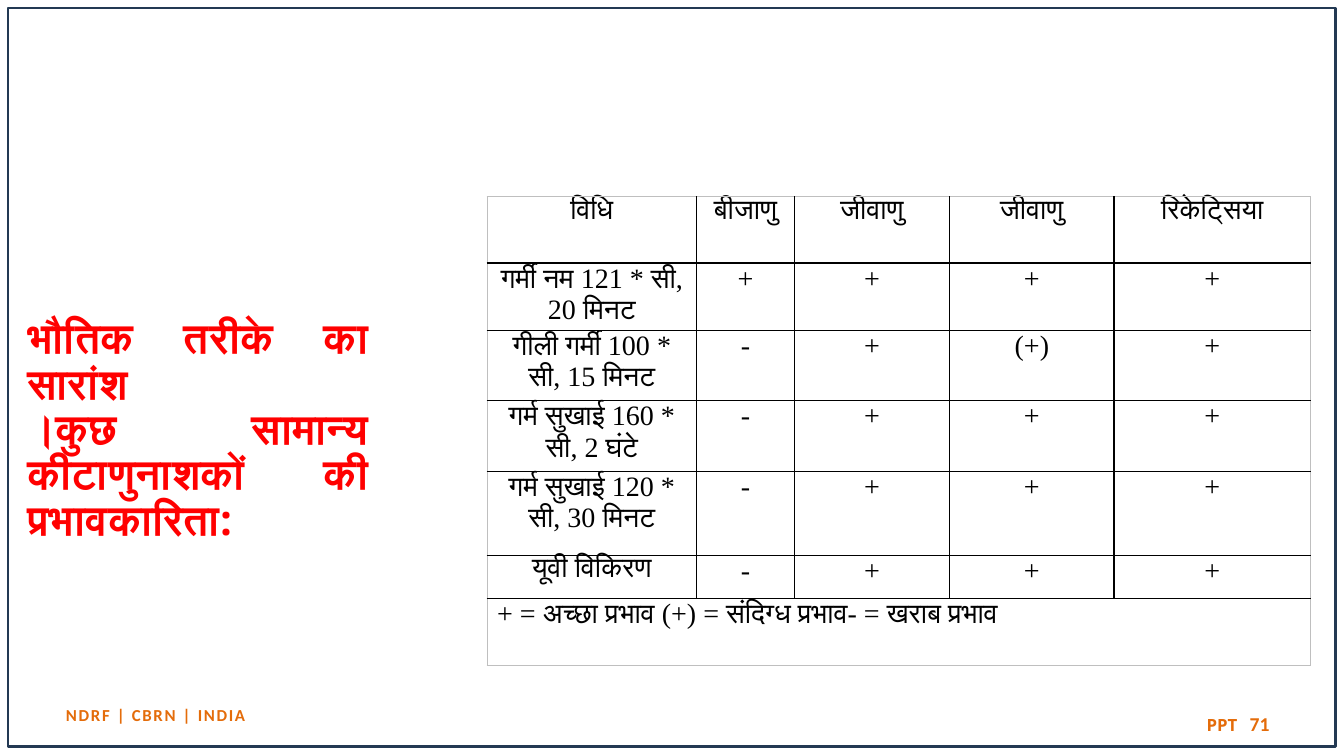
from dataclasses import dataclass
from lxml.etree import SubElement
from pptx import Presentation
from pptx.dml.color import RGBColor
from pptx.enum.shapes import MSO_SHAPE
from pptx.enum.text import MSO_ANCHOR, PP_ALIGN
from pptx.oxml.ns import qn
from pptx.util import Inches, Pt


@dataclass(frozen=True)
class Theme:
    ink: str = "000000"
    red: str = "FF0000"
    orange: str = "E46C0A"
    navy: str = "233953"
    pale: str = "BFBFBF"
    head: int = 30
    cell: int = 20
    page: int = 14
    foot: int = 12
    sans: str = "Open Sans"
    plain: str = "Calibri"
    serif: str = "Times New Roman"


THEME = Theme()
WIDE, HIGH = 13.33, 7.5
COLS = [2.08, 0.97, 1.54, 1.63, 1.95]
ROWS = [0.66, 0.63, 0.7, 0.7, 0.83, 0.43, 0.66]
HEADS = ["विधि", "बीजाणु", "जीवाणु", "जीवाणु", "रिकेट्सिया"]
METHODS = [
    ("गर्मी नम 121 * सी, 20 मिनट", "+", "+", "+", "+"),
    ("गीली गर्मी 100 * सी, 15 मिनट", "-", "+", "(+)", "+"),
    ("गर्म सुखाई 160 * सी, 2 घंटे", "-", "+", "+", "+"),
    ("गर्म सुखाई 120 * सी, 30 मिनट", "-", "+", "+", "+"),
    ("यूवी विकिरण", "-", "+", "+", "+"),
]
LEGEND = "+ = अच्छा प्रभाव (+) = संदिग्ध प्रभाव- = खराब प्रभाव"
TITLE = "भौतिक तरीके का सारांश\v।कुछ सामान्य कीटाणुनाशकों की प्रभावकारिता:"


def write(frame, text, size, face, color, bold=False, align=PP_ALIGN.CENTER,
          space=0, line=None):
    para = frame.paragraphs[0]
    para.text = text
    para.alignment = align
    para.line_spacing = line
    for run in para.runs:
        font = run.font
        font.size, font.name, font.bold = Pt(size), face, bold
        font.color.rgb = RGBColor.from_string(color)
        if space:
            font._element.set("spc", str(round(space * 100)))


def label(slide, box, text, pads=(0.1, 0.05, 0.1, 0.05), wrap=True,
          anchor=MSO_ANCHOR.TOP, **form):
    """Add a text box; pads run left, top, right, bottom."""
    frame = slide.shapes.add_textbox(*map(Inches, box)).text_frame
    frame.word_wrap, frame.vertical_anchor = wrap, anchor
    (frame.margin_left, frame.margin_top,
     frame.margin_right, frame.margin_bottom) = map(Inches, pads)
    write(frame, text, **form)


def edge(cell, side, color, width):
    line = SubElement(cell._tc.get_or_add_tcPr(), qn(f"a:ln{side}"),
                      w=str(Pt(width)))
    fill = SubElement(line, qn("a:solidFill"))
    SubElement(fill, qn("a:srgbClr"), val=color)


def border(slide, box):
    rect = slide.shapes.add_shape(MSO_SHAPE.RECTANGLE, *map(Inches, box))
    rect.shadow.inherit = False
    rect.fill.background()
    rect.line.color.rgb = RGBColor.from_string(THEME.navy)
    rect.line.width = Pt(2)


def footer(slide, box):
    left, top, width, height = box
    pads = (0.09,) * 4
    mark = dict(size=THEME.foot, color=THEME.orange, bold=True)
    label(slide, (left, top, 2.75, 0.37), "NDRF | CBRN | INDIA", pads,
          face=THEME.plain, space=1.2, **mark)
    label(slide, (left + 11.66, top + 0.1, 0.58, 0.37), "PPT -", pads,
          wrap=False, face=THEME.sans, **mark)
    label(slide, (left + width - 3.11, top + 0.08, 3.11, 0.4), "71",
          anchor=MSO_ANCHOR.MIDDLE, align=PP_ALIGN.RIGHT, face=THEME.plain,
          **(mark | dict(size=THEME.page)))


def effects(slide, box):
    """Add the table of methods and how well each one works."""
    grid = [HEADS, *METHODS, (LEGEND, "", "", "", "")]
    table = slide.shapes.add_table(len(ROWS), len(COLS),
                                   *map(Inches, box)).table
    for col, width in zip(table.columns, COLS):
        col.width = Inches(width)
    for row, height in zip(table.rows, ROWS):
        row.height = Inches(height)
    last, end = len(ROWS) - 1, len(COLS) - 1
    table.cell(last, 0).merge(table.cell(last, end))
    for r, line in enumerate(grid):
        for c, text in enumerate(line):
            cell = table.cell(r, c)
            cell.margin_left = cell.margin_right = Inches(0.1)
            cell.margin_top = cell.margin_bottom = 0
            outer = dict(L=c == 0, R=c == end or r == last,
                         T=r == 0, B=r == last)
            for side, out in outer.items():
                edge(cell, side, THEME.pale if out else THEME.ink,
                     0.5 if out else 1)
            cell.fill.background()
            if text:
                write(cell.text_frame, text, THEME.cell, THEME.serif,
                      THEME.ink,
                      align=PP_ALIGN.JUSTIFY if r == last else PP_ALIGN.CENTER)


def main():
    deck = Presentation()
    deck.slide_width, deck.slide_height = Inches(WIDE), Inches(HIGH)
    slide = deck.slides.add_slide(deck.slide_layouts[6])
    footer(slide, (0.17, 6.9, 12.52, 0.48))
    label(slide, (0.17, 2.49, 3.58, 4.1), TITLE, (0.1, 0.05, 0.1, 0.58),
          anchor=MSO_ANCHOR.MIDDLE, size=THEME.head, face=THEME.sans,
          color=THEME.red, bold=True, align=PP_ALIGN.JUSTIFY, line=0.9)
    border(slide, (0.08, 0.08, WIDE - 0.16, HIGH - 0.17))
    effects(slide, (4.83, 1.95, sum(COLS), sum(ROWS)))
    deck.save("out.pptx")


if __name__ == "__main__":
    main()
